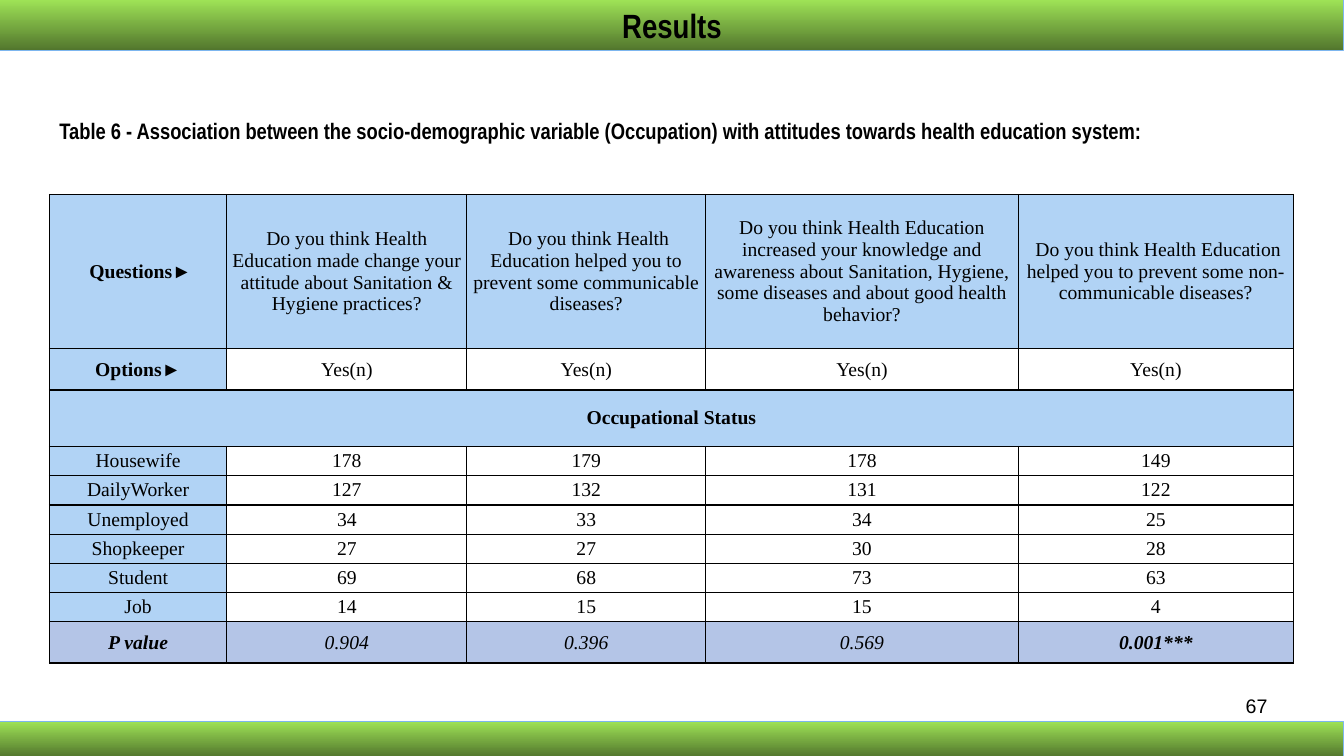
from lxml import etree
from pptx import Presentation
from pptx.dml.color import RGBColor
from pptx.enum.shapes import MSO_SHAPE as SHAPE
from pptx.enum.text import MSO_ANCHOR as ANCHOR, PP_ALIGN as ALIGN
from pptx.oxml.ns import qn
from pptx.util import Inches, Pt

WIDTH, HEIGHT = 13.33, 7.5
BLACK, SKY, LILAC = "000000", "B1D3F5", "B4C5E7"
BAR_TOP, BAR_BOTTOM, BAR_LINE = "9EE256", "52762D", "7DB6EF"

COL_WIDTHS = [1.76, 2.38, 2.37, 3.1, 2.73]
ROW_HEIGHTS = [1.53, 0.41, 0.56] + [0.29] * 6 + [0.41]
ROWS = [
    [
        " Questions►",
        "Do you think Health Education made change your attitude about Sanitation & Hygiene practices?",
        " Do you think Health Education helped you to prevent some communicable diseases?",
        "Do you think Health Education increased your knowledge and awareness about Sanitation, "
        "Hygiene, some diseases and about good health behavior?",
        " Do you think Health Education helped you to prevent some non- communicable diseases?",
    ],
    ["Options►"] + ["Yes(n)"] * 4,
    ["Occupational Status"],
    ["Housewife", "178", "179", "178", "149"],
    ["DailyWorker", "127", "132", "131", "122"],
    ["Unemployed", "34", "33", "34", "25"],
    ["Shopkeeper", "27", "27", "30", "28"],
    ["Student", "69", "68", "73", "63"],
    ["Job", "14", "15", "15", "4"],
    ["P value", "0.904", "0.396", "0.569", "0.001***"],
]
QUESTION_ROW, STATUS_ROW, P_ROW = 0, 2, len(ROWS) - 1
BOLD_CELLS = {(0, 0), (1, 0), (STATUS_ROW, 0), (P_ROW, 0), (P_ROW, 4)}


def rgb(color):
    return RGBColor.from_string(color)


def write(tf, text, size, font, align, bold=False, italic=False):
    p = tf.paragraphs[0]
    p.alignment = align
    r = p.add_run()
    r.text = text
    r.font.size = Pt(size)
    r.font.name = font
    r.font.bold = bold
    r.font.italic = italic
    r.font.color.rgb = rgb(BLACK)


def add_bar(s, x, y, w, h, title=None):
    sp = s.shapes.add_shape(SHAPE.RECTANGLE, Inches(x), Inches(y), Inches(w), Inches(h))
    sp.shadow.inherit = False
    sp.fill.gradient()
    sp.fill.gradient_angle = 270
    for stop, position, color in zip(sp.fill.gradient_stops, (0, 1), (BAR_TOP, BAR_BOTTOM)):
        stop.position = position
        stop.color.rgb = rgb(color)
    sp.line.color.rgb = rgb(BAR_LINE)
    sp.line.width = Pt(0.75)
    if title:
        tf = sp.text_frame
        tf.word_wrap = False
        tf.vertical_anchor = ANCHOR.MIDDLE
        write(tf, title, 24, "Arial Narrow", ALIGN.CENTER, bold=True)


def add_text(s, x, y, w, h, text, size, font, align, bold=False):
    tf = s.shapes.add_textbox(Inches(x), Inches(y), Inches(w), Inches(h)).text_frame
    tf.word_wrap = True
    write(tf, text, size, font, align, bold)


def set_borders(cell):
    tc_pr = cell._tc.get_or_add_tcPr()
    for i, side in enumerate(("a:lnL", "a:lnR", "a:lnT", "a:lnB")):
        ln = etree.Element(qn(side), w=str(Pt(1)))
        fill = etree.SubElement(ln, qn("a:solidFill"))
        etree.SubElement(fill, qn("a:srgbClr"), val=BLACK)
        tc_pr.insert(i, ln)


def cell_color(row, col):
    if row == P_ROW:
        return LILAC
    return SKY if col == 0 or row in (QUESTION_ROW, STATUS_ROW) else None


def style_cell(cell, row, col):
    cell.margin_left = cell.margin_right = cell.margin_top = cell.margin_bottom = 0
    cell.vertical_anchor = ANCHOR.MIDDLE
    color = cell_color(row, col)
    if color:
        cell.fill.solid()
        cell.fill.fore_color.rgb = rgb(color)
    else:
        cell.fill.background()
    set_borders(cell)


def add_results_table(s, x, y, w, h):
    frame = s.shapes.add_table(len(ROWS), len(COL_WIDTHS), Inches(x), Inches(y), Inches(w), Inches(h))
    table = frame.table
    table.first_row = table.horz_banding = False
    for column, width in zip(table.columns, COL_WIDTHS):
        column.width = Inches(width * w / sum(COL_WIDTHS))
    for row, height in zip(table.rows, ROW_HEIGHTS):
        row.height = Inches(height * h / sum(ROW_HEIGHTS))
    for i in range(len(ROWS)):
        for j in range(len(COL_WIDTHS)):
            style_cell(table.cell(i, j), i, j)
    table.cell(STATUS_ROW, 0).merge(table.cell(STATUS_ROW, len(COL_WIDTHS) - 1))
    for i, texts in enumerate(ROWS):
        for j, text in enumerate(texts):
            write(table.cell(i, j).text_frame, text, 14, "Times New Roman", ALIGN.CENTER,
                  bold=(i, j) in BOLD_CELLS, italic=i == P_ROW)


def main():
    prs = Presentation()
    prs.slide_width, prs.slide_height = Inches(WIDTH), Inches(HEIGHT)
    s = prs.slides.add_slide(prs.slide_layouts[6])
    add_text(s, 0.49, 1.11, 11.99, 0.64,
             "Table 6 - Association between the socio-demographic variable (Occupation) "
             "with attitudes towards health education system:",
             16, "Arial Narrow", ALIGN.LEFT, bold=True)
    add_results_table(s, 0.49, 1.93, sum(COL_WIDTHS), sum(ROW_HEIGHTS))
    add_bar(s, 0, 0, WIDTH, 0.5, "Results")
    add_bar(s, 0, 7.16, WIDTH, 0.35)
    add_text(s, 9.56, 6.83, 3.11, 0.52, "67", 14, "Arial", ALIGN.RIGHT)
    prs.save("out.pptx")


if __name__ == "__main__":
    main()
